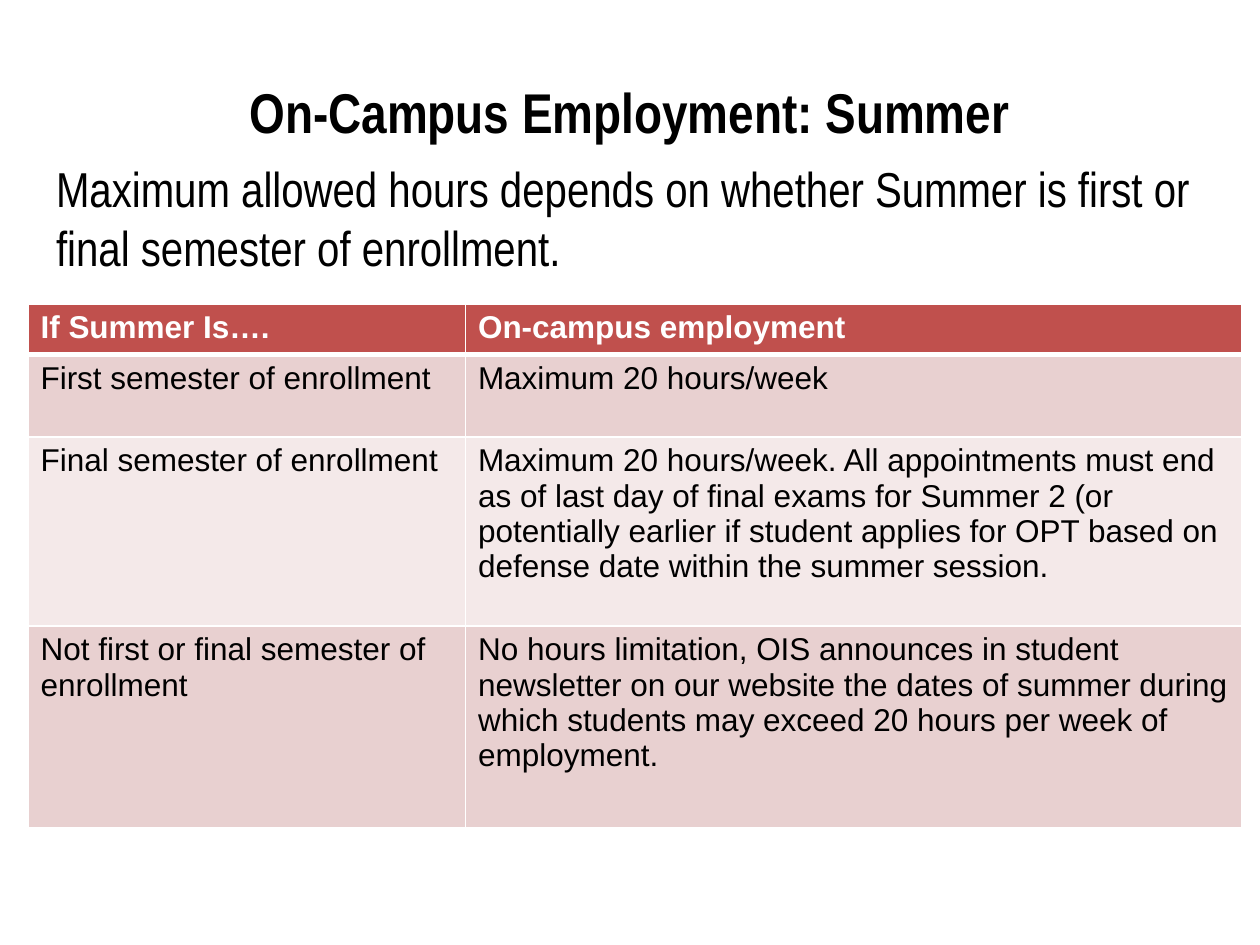
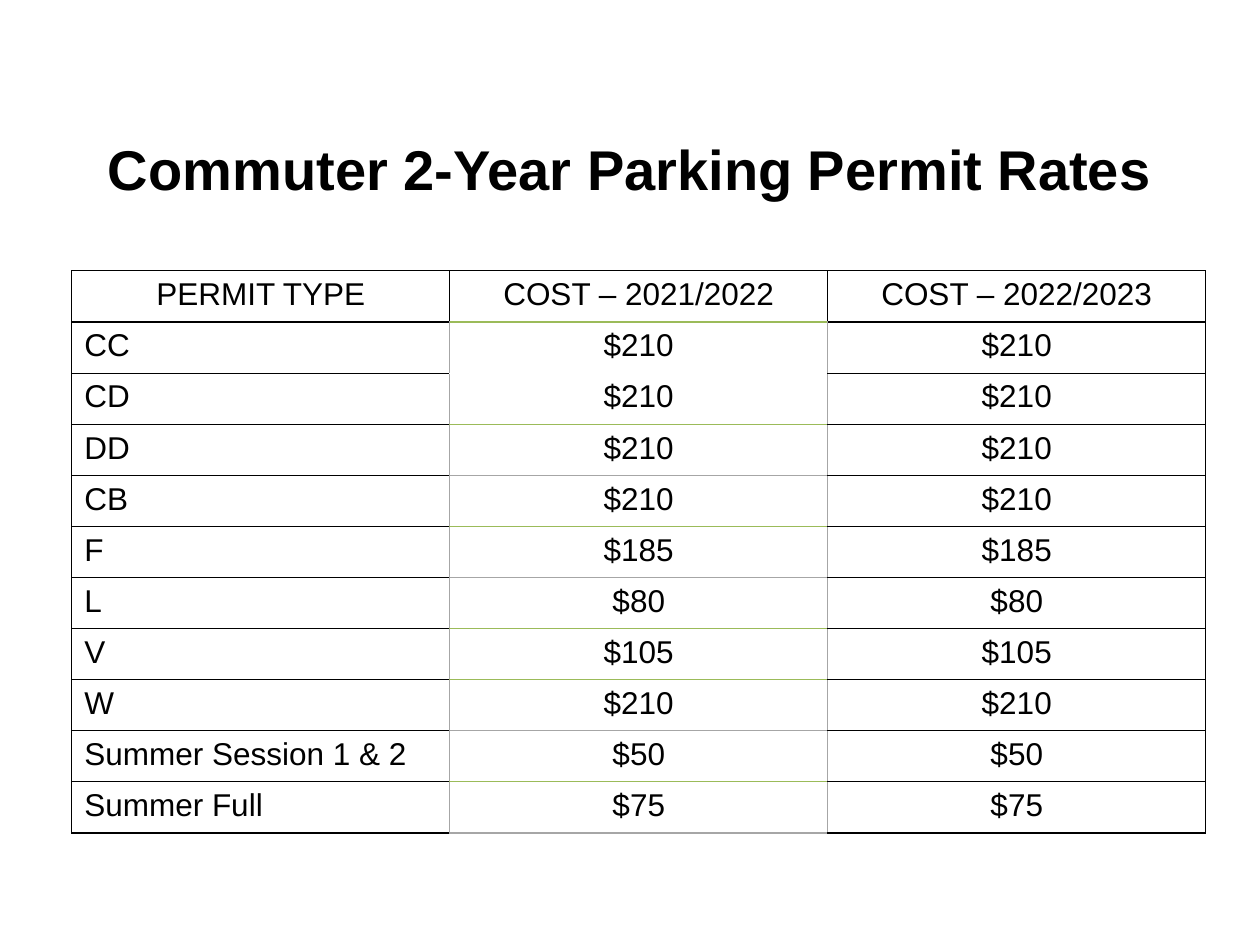
from lxml import etree
from pptx import Presentation
from pptx.dml.color import RGBColor
from pptx.enum.text import MSO_ANCHOR, PP_ALIGN
from pptx.oxml.ns import qn
from pptx.util import Pt

LEFT, CENTER = PP_ALIGN.LEFT, PP_ALIGN.CENTER
TOP, MIDDLE = MSO_ANCHOR.TOP, MSO_ANCHOR.MIDDLE

BLACK = RGBColor(0x00, 0x00, 0x00)
WHITE = RGBColor(0xFF, 0xFF, 0xFF)
RED = RGBColor(0xC0, 0x50, 0x4D)
ROSE = RGBColor(0xE8, 0xD0, 0xD0)
PALE_ROSE = RGBColor(0xF4, 0xE9, 0xE9)
GREEN = RGBColor(0x9B, 0xBB, 0x59)
GRAY = RGBColor(0xA6, 0xA6, 0xA6)

SANS, NARROW = "Arial", "Arial Narrow"
TITLE_SIZE, BODY_SIZE, TABLE_SIZE = 32, 28, 18
THIN = 0.75

SUMMER_RULES = [
    ("If Summer Is….", "On-campus employment"),
    ("First semester of enrollment", "Maximum 20 hours/week"),
    ("Final semester of enrollment",
     "Maximum 20 hours/week. All appointments must end as of last day of final "
     "exams for Summer 2 (or potentially earlier if student applies for OPT "
     "based on defense date within the summer session."),
    ("Not first or final semester of enrollment",
     "No hours limitation, OIS announces in student newsletter on our website "
     "the dates of summer during which students may exceed 20 hours per week "
     "of employment."),
]

PERMIT_COSTS = [
    ("CC", "$210"), ("CD", "$210"), ("DD", "$210"), ("CB", "$210"),
    ("F", "$185"), ("L", "$80"), ("V", "$105"), ("W", "$210"),
    ("Summer Session 1 & 2", "$50"), ("Summer Full", "$75"),
]
PERMIT_ROWS = [("PERMIT TYPE", "COST – 2021/2022", "COST – 2022/2023")]
PERMIT_ROWS += [(permit, cost, cost) for permit, cost in PERMIT_COSTS]

# Horizontal rules of the middle cost column, from the top edge down
MIDDLE_RULES = [BLACK, GREEN, WHITE, GREEN, GRAY, GREEN,
                GRAY, GREEN, GREEN, GRAY, GREEN, GRAY]


def style_paragraph(para, text, font, size, color=BLACK, bold=False, align=LEFT):
    para.text = text
    para.alignment = align
    para.font.name = font
    para.font.size = Pt(size)
    para.font.bold = bold
    para.font.color.rgb = color


def add_text(page, left, top, width, height, text, font, size, anchor=TOP, **style):
    box = page.shapes.add_textbox(Pt(left), Pt(top), Pt(width), Pt(height))
    frame = box.text_frame
    frame.word_wrap = True
    frame.vertical_anchor = anchor
    style_paragraph(frame.paragraphs[0], text, font, size, **style)
    return frame.paragraphs[0]


def add_title(page, top, height, text, font):
    add_text(page, 36, top, 648, height, text, font, TITLE_SIZE,
             anchor=MIDDLE, bold=True, align=CENTER)


def set_borders(cell, rules):
    """Draw left, right, top and bottom rules, each a (colour, width) pair."""
    properties = cell._tc.get_or_add_tcPr()
    for place, (side, (color, width)) in enumerate(zip("LRTB", rules)):
        line = etree.Element(qn(f"a:ln{side}"), w=str(Pt(width)))
        fill = etree.SubElement(line, qn("a:solidFill"))
        etree.SubElement(fill, qn("a:srgbClr"), val=str(color))
        properties.insert(place, line)


def add_table(page, left, top, widths, heights, rows, column_rule, row_rule, style_cell):
    """Add a table; the rule functions take an edge number and a cross index."""
    table = page.shapes.add_table(len(heights), len(widths), Pt(left), Pt(top),
                                  Pt(sum(widths)), Pt(sum(heights))).table
    table.first_row = table.horz_banding = False
    for column, width in zip(table.columns, widths):
        column.width = Pt(width)
    for r, (texts, height) in enumerate(zip(rows, heights)):
        table.rows[r].height = Pt(height)
        for c, text in enumerate(texts):
            cell = table.cell(r, c)
            set_borders(cell, [column_rule(c, r), column_rule(c + 1, r),
                               row_rule(r, c), row_rule(r + 1, c)])
            style_cell(cell, text, r, c)


def summer_row_rule(edge, column):
    return WHITE, 3 if edge == 1 else 1


def summer_column_rule(edge, row):
    return WHITE, 1


def style_summer_cell(cell, text, row, column):
    header = row == 0
    cell.fill.solid()
    cell.fill.fore_color.rgb = RED if header else ROSE if row % 2 else PALE_ROSE
    style_paragraph(cell.text_frame.paragraphs[0], text, SANS, TABLE_SIZE,
                    color=WHITE if header else BLACK, bold=header)


def permit_row_rule(edge, column):
    return MIDDLE_RULES[edge] if column == 1 else BLACK, THIN


def permit_column_rule(edge, row):
    return GRAY if edge in (1, 2) and row > 0 else BLACK, THIN


def style_permit_cell(cell, text, row, column):
    cell.fill.background()
    style_paragraph(cell.text_frame.paragraphs[0], text, SANS, TABLE_SIZE,
                    align=CENTER if row == 0 or column > 0 else LEFT)


def build_summer_page(page):
    add_title(page, 31, 65.5, "On-Campus Employment: Summer", NARROW)
    para = add_text(page, 23, 87.1, 674.6, 414.7,
                    "Maximum allowed hours depends on whether Summer is first or "
                    "final semester of enrollment.", NARROW, BODY_SIZE)
    para._p.get_or_add_pPr().set("marL", str(Pt(2)))
    add_table(page, 16, 173.7, [250, 443.4], [26.7, 47.2, 108, 115.4],
              SUMMER_RULES, summer_column_rule, summer_row_rule, style_summer_cell)


def build_permit_page(page):
    add_title(page, 54, 84.2, "Commuter 2-Year Parking Permit Rates", SANS)
    add_table(page, 41, 154.8, [216] * 3, [29.2] * len(PERMIT_ROWS),
              PERMIT_ROWS, permit_column_rule, permit_row_rule, style_permit_cell)


def main():
    deck = Presentation()
    deck.slide_width, deck.slide_height = Pt(720), Pt(540)
    blank = deck.slide_layouts[6]
    for build_page in (build_summer_page, build_permit_page):
        build_page(deck.slides.add_slide(blank))
    deck.save("out.pptx")


if __name__ == "__main__":
    main()
